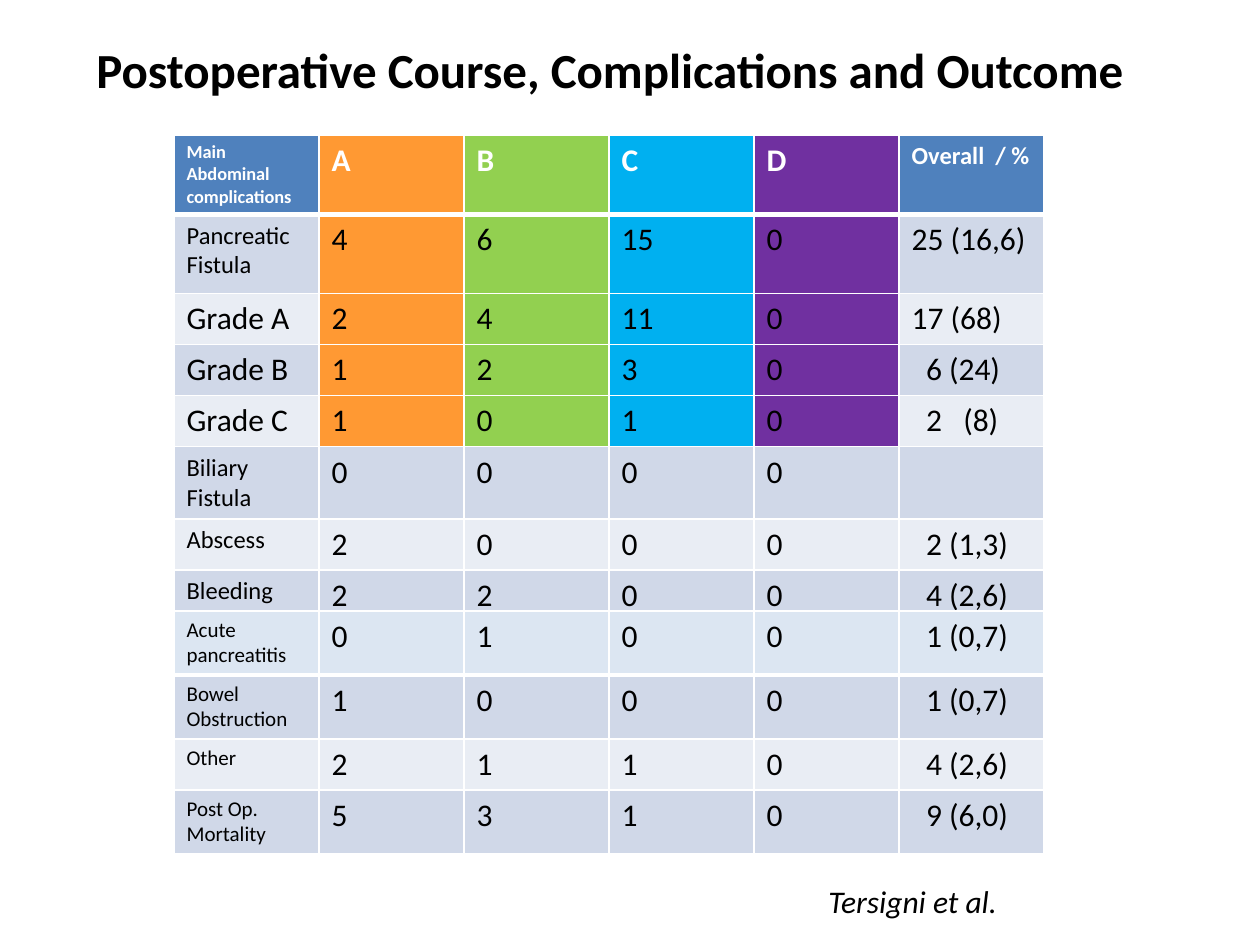
import pptx
import pptx.util
import pptx.dml.color
import pptx.enum.text
import pptx.oxml.ns
from lxml import etree

BAND = ["D0D8E8", "E9EDF4"]
GROUPS = ["FF9933", "92D050", "00B0F0", "7030A0"]
HEADER = "4F81BD"
COL_W = 145
INSET, INDENT = 13, 14

COMPLICATIONS = [
    ("Main\nAbdominal\ncomplications", 10.5, 79, "A B C D", "Overall  / %", False),
    ("Pancreatic\nFistula", 14, 79, "4 6 15 0", "25 (16,6)", False),
    ("Grade A", 18, 51, "2 4 11 0", "17 (68)", False),
    ("Grade B", 18, 51, "1 2 3 0", "6 (24)", True),
    ("Grade C", 18, 51, "1 0 1 0", "2   (8)", True),
    ("Biliary\nFistula", 14, 72, "0 0 0 0", "", False),
    ("Abscess", 14, 51, "2 0 0 0", "2 (1,3)", True),
    ("Bleeding", 14, 51, "2 2 0 0", "4 (2,6)", True),
]
OUTCOMES = [
    ("Acute\npancreatitis", 12, 64, "0 1 0 0", "1 (0,7)", True),
    ("Bowel\nObstruction", 12, 64, "1 0 0 0", "1 (0,7)", True),
    ("Other", 12, 51, "2 1 1 0", "4 (2,6)", True),
    ("Post Op.\nMortality", 12, 62, "5 3 1 0", "9 (6,0)", True),
]


def px(n):
    """Turn whole pixels at 126 to the inch into EMU."""
    return pptx.util.Emu(round(n * 914400 / 126))


def rgb(color):
    """Turn a hex string into a colour."""
    return pptx.dml.color.RGBColor.from_string(color)


def write(tf, text, size=18, color="000000", bold=False, italic=False):
    """Fill a text frame with one paragraph for each line of text."""
    for i, line in enumerate(text.split("\n")):
        p = tf.paragraphs[0] if i == 0 else tf.add_paragraph()
        p.font.size = pptx.util.Pt(size)
        if line:
            r = p.add_run()
            r.text = line
            r.font.name = "Calibri"
            r.font.size = pptx.util.Pt(size)
            r.font.bold = bold
            r.font.italic = italic
            r.font.color.rgb = rgb(color)


def add_borders(cell, **widths):
    """Draw white cell borders, 1 pt unless a side is given its own width."""
    tcPr = cell._tc.get_or_add_tcPr()
    qn = pptx.oxml.ns.qn
    for side in "LRTB":
        width = pptx.util.Pt(widths.get(side, 1))
        ln = etree.SubElement(tcPr, qn(f"a:ln{side}"), w=str(int(width)))
        fill = etree.SubElement(ln, qn("a:solidFill"))
        etree.SubElement(fill, qn("a:srgbClr"), val="FFFFFF")


def add_results(s, x, y, rows, fill_for, has_header=False):
    """Place a table of results by patient group with its corner at x, y."""
    height = sum(row[2] for row in rows)
    table = s.shapes.add_table(len(rows), 6, px(x), px(y), px(6 * COL_W), px(height)).table
    for column in table.columns:
        column.width = px(COL_W)
    for i, (label, label_size, row_h, counts, overall, indented) in enumerate(rows):
        table.rows[i].height = px(row_h)
        header = has_header and i == 0
        for j, text in enumerate([label, *counts.split(), overall]):
            cell = table.cell(i, j)
            add_borders(cell, **{0: {"B": 3}, 1: {"T": 3}}.get(i, {}))
            cell.fill.solid()
            cell.fill.fore_color.rgb = rgb(fill_for(i, j))
            if j == 5 and indented:
                cell.margin_left = px(INSET + INDENT)
            size = label_size if j == 0 else 14 if header and j == 5 else 18
            write(cell.text_frame, text, size=size, bold=header,
                  color="FFFFFF" if header else "000000")


def complication_fill(i, j):
    """Colour the group columns down to Grade C and band the rest."""
    if i < 5 and 1 <= j <= 4:
        return GROUPS[j - 1]
    return HEADER if i == 0 else BAND[(i - 1) % 2]


def outcome_fill(i, j):
    """Tint the first row and band the rest."""
    return "DCE6F2" if i == 0 else BAND[(i - 1) % 2]


def add_text(s, x, y, w, h, text, **fmt):
    """Place one line of text in a box that fits it."""
    tf = s.shapes.add_textbox(px(x), px(y), px(w), px(h)).text_frame
    tf.word_wrap = False
    tf.auto_size = pptx.enum.text.MSO_AUTO_SIZE.SHAPE_TO_FIT_TEXT
    write(tf, text, **fmt)


def main():
    """Build the slide and save it."""
    prs = pptx.Presentation()
    prs.slide_width, prs.slide_height = px(1260), px(945)
    s = prs.slides.add_slide(prs.slide_layouts[6])
    add_results(s, 174, 135, COMPLICATIONS, complication_fill, has_header=True)
    add_results(s, 174, 611, OUTCOMES, outcome_fill)
    add_text(s, 84, 33, 1065, 72, "Postoperative Course, Complications and Outcome",
             size=28, bold=True)
    add_text(s, 816, 876, 194, 50, "Tersigni et al.", italic=True)
    prs.save("out.pptx")


if __name__ == "__main__":
    main()
